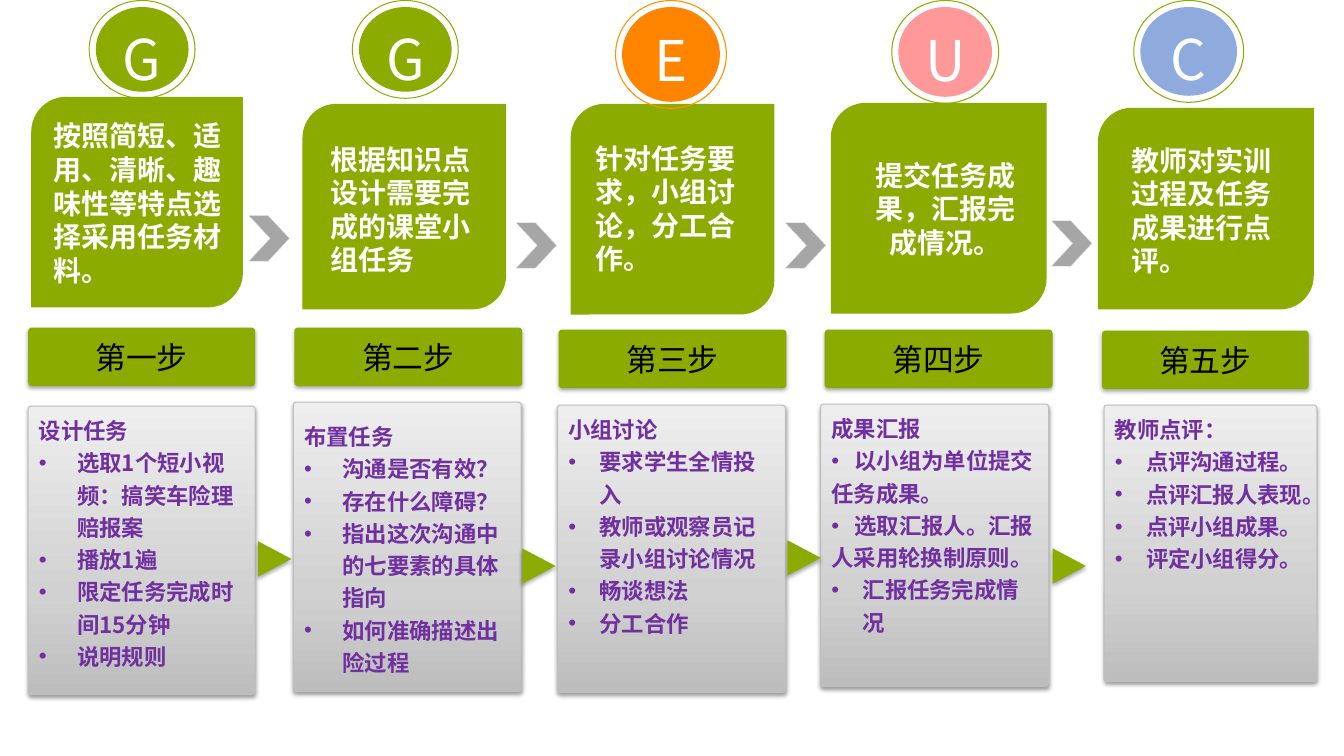
from dataclasses import dataclass
from copy import deepcopy

from lxml.etree import SubElement
from pptx import Presentation
from pptx.dml.color import RGBColor
from pptx.enum.shapes import MSO_SHAPE
from pptx.enum.text import MSO_ANCHOR, PP_ALIGN
from pptx.oxml.ns import qn
from pptx.util import Pt

PX = 9144  # EMU per px, 100 px to the inch
FONT = "Noto Sans CJK SC"
COLORS = {
    "green": "8BAB00", "orange": "FF8500", "orange_ring": "FF9300",
    "pink": "FF9999", "blue": "8FAADC", "chevron": "A6A6A6",
    "chevron_edge": "D7D7D7", "card_edge": "BFBFBF", "purple": "7030A0",
    "white": "FFFFFF", "black": "000000",
}
CARD_GRADIENT = [(0, "BDBDBD"), (0.35, "D1D1D1"), (1, "EEEEEE")]


@dataclass
class Step:
    letter: str
    ring: tuple  # left, width, height
    ring_color: str
    disc_color: str
    leaf: tuple
    task_box: tuple
    task: str
    label_box: tuple
    label: str
    card: tuple
    heading: str
    points: list
    hanging: int = 31
    flush_points: int = 0  # leading points whose wrapped lines start at the edge
    task_align: PP_ALIGN = PP_ALIGN.LEFT
    card_anchor: MSO_ANCHOR = MSO_ANCHOR.TOP


STEPS = [
    Step("G", (88, 106, 98), "green", "green", (31, 96, 210, 209),
         (43, 113, 196, 178), "按照简短、适用、清晰、趣味性等特点选择采用任务材料。",
         (28, 325, 225, 58), "第一步", (28, 403, 225, 286), "设计任务",
         ["选取1个短小视频：搞笑车险理赔报案", "播放1遍",
          "限定任务完成时间15分钟", "说明规则"], hanging=38),
    Step("G", (349, 106, 98), "green", "green", (300, 103, 202, 204),
         (318, 136, 166, 145), "根据知识点设计需要完成的课堂小组任务",
         (292, 325, 226, 58), "第二步", (291, 399, 226, 287), "布置任务",
         ["沟通是否有效？", "存在什么障碍？", "指出这次沟通中的七要素的具体指向",
          "如何准确描述出险过程"], hanging=38, card_anchor=MSO_ANCHOR.MIDDLE),
    Step("E", (610, 111, 108), "orange_ring", "orange", (566, 103, 202, 209),
         (581, 135, 176, 145), "针对任务要求，小组讨论，分工合作。",
         (554, 327, 226, 58), "第三步", (553, 402, 226, 285), "小组讨论",
         ["要求学生全情投入", "教师或观察员记录小组讨论情况", "畅谈想法", "分工合作"]),
    Step("U", (884, 107, 103), "green", "pink", (824, 102, 214, 209),
         (854, 152, 167, 111), "提交任务成果，汇报完成情况。",
         (818, 327, 226, 58), "第四步", (814, 401, 226, 280), "成果汇报",
         ["以小组为单位提交任务成果。", "选取汇报人。汇报人采用轮换制原则。",
          "汇报任务完成情况"], flush_points=2, task_align=PP_ALIGN.CENTER),
    Step("C", (1124, 110, 102), "green", "blue", (1089, 107, 214, 200),
         (1112, 137, 176, 145), "教师对实训过程及任务成果进行点评。",
         (1093, 328, 205, 58), "第五步", (1095, 402, 211, 274), "教师点评：",
         ["点评沟通过程。", "点评汇报人表现。", "点评小组成果。", "评定小组得分。"]),
]
CHEVRONS = [(247, 214), (512, 221), (779, 221), (1043, 219)]
TRIANGLES = [(255, 538), (517, 545), (780, 537), (1043, 545)]


def rgb(name):
    return RGBColor.from_string(COLORS[name])


def emu(box):
    return [length * PX for length in box]


def add_form(slide, kind, box, fill, adjust=None, edge=None, edge_width=0):
    form = slide.shapes.add_shape(kind, *emu(box))
    form.shadow.inherit = False
    form.fill.solid()
    form.fill.fore_color.rgb = rgb(fill)
    if adjust is not None:
        form.adjustments[0] = adjust
    if edge:
        form.line.color.rgb = rgb(edge)
        form.line.width = Pt(edge_width)
    else:
        form.line.fill.background()
    return form


def add_shadow(form, opacity):
    effects = form._element.spPr.find(qn("a:effectLst"))
    shadow = SubElement(effects, qn("a:outerShdw"), blurRad=str(Pt(3.1)),
                        dist=str(Pt(1.8)), dir="5400000", rotWithShape="0")
    color = SubElement(shadow, qn("a:srgbClr"), val=COLORS["black"])
    SubElement(color, qn("a:alpha"), val=str(opacity * 1000))


def shade_card(card):
    card.fill.gradient()
    card.fill.gradient_angle = 90
    stop_list = card._element.spPr.find(qn("a:gradFill")).find(qn("a:gsLst"))
    stop_list.insert(1, deepcopy(stop_list[0]))
    for stop, (position, color) in zip(card.fill.gradient_stops, CARD_GRADIENT):
        stop.position = position
        stop.color.rgb = RGBColor.from_string(color)


def style(paragraph, size, color, bold=False, align=PP_ALIGN.LEFT):
    paragraph.alignment = align
    font = paragraph.font
    font.size, font.bold, font.name = Pt(size), bold, FONT
    font.color.rgb = rgb(color)
    SubElement(font._element, qn("a:ea"), typeface=FONT)


def add_bullet(paragraph, hanging, tab=None):
    properties = paragraph._p.get_or_add_pPr()
    properties.set("marL", str(hanging * PX))
    properties.set("indent", str(-hanging * PX))
    SubElement(properties, qn("a:buFont"), typeface="Arial")
    SubElement(properties, qn("a:buChar"), char="•")
    if tab:
        tabs = SubElement(properties, qn("a:tabLst"))
        SubElement(tabs, qn("a:tab"), pos=str(tab * PX), algn="l")


def add_badge(slide, step):
    left, width, height = step.ring
    add_form(slide, MSO_SHAPE.DONUT, (left, 0, width, height), step.ring_color, 0.01)
    disc = add_form(slide, MSO_SHAPE.OVAL, (left + 7, 7, width - 14, height - 14),
                    step.disc_color)
    frame = disc.text_frame
    frame.vertical_anchor = MSO_ANCHOR.TOP
    frame.text = step.letter
    style(frame.paragraphs[0], 40, "white", align=PP_ALIGN.CENTER)


def add_task(slide, step):
    add_form(slide, MSO_SHAPE.ROUND_2_DIAG_RECTANGLE, step.leaf, "green")
    frame = slide.shapes.add_textbox(*emu(step.task_box)).text_frame
    frame.word_wrap = True
    frame.text = step.task
    style(frame.paragraphs[0], 20, "white", True, step.task_align)


def add_label(slide, step):
    label = add_form(slide, MSO_SHAPE.ROUNDED_RECTANGLE, step.label_box, "green", 0.06)
    add_shadow(label, 35)
    frame = label.text_frame
    frame.word_wrap = False
    frame.vertical_anchor = MSO_ANCHOR.MIDDLE
    frame.text = step.label
    style(frame.paragraphs[0], 22, "black", align=PP_ALIGN.CENTER)


def add_card(slide, step):
    card = add_form(slide, MSO_SHAPE.ROUNDED_RECTANGLE, step.card, "white", 0.013,
                    "card_edge", 0.75)
    shade_card(card)
    add_shadow(card, 38)
    frame = card.text_frame
    frame.word_wrap = True
    frame.vertical_anchor = step.card_anchor
    frame.text = step.heading
    for number, point in enumerate(step.points):
        paragraph = frame.add_paragraph()
        if number < step.flush_points:
            paragraph.text = "\t" + point
            add_bullet(paragraph, 0, tab=23)
        else:
            paragraph.text = point
            add_bullet(paragraph, step.hanging)
    for paragraph in frame.paragraphs:
        paragraph.line_spacing = 1.2
        style(paragraph, 16, "purple", True)


def add_arrows(slide):
    for left, top in CHEVRONS:
        add_form(slide, MSO_SHAPE.CHEVRON, (left, top, 40, 45), "chevron", 0.525,
                 "chevron_edge", 0.25)
    for left, top in TRIANGLES:
        triangle = add_form(slide, MSO_SHAPE.FLOWCHART_EXTRACT, (left, top, 35, 33),
                            "green")
        triangle.rotation = 90
        add_shadow(triangle, 35)


def main():
    deck = Presentation()
    deck.slide_width, deck.slide_height = emu((1333, 750))
    slide = deck.slides.add_slide(deck.slide_layouts[6])

    # Five steps, each a column
    for step in STEPS:
        add_label(slide, step)
        add_card(slide, step)
        add_task(slide, step)
        add_badge(slide, step)

    # Arrows between the columns
    add_arrows(slide)
    deck.save("out.pptx")


if __name__ == "__main__":
    main()
